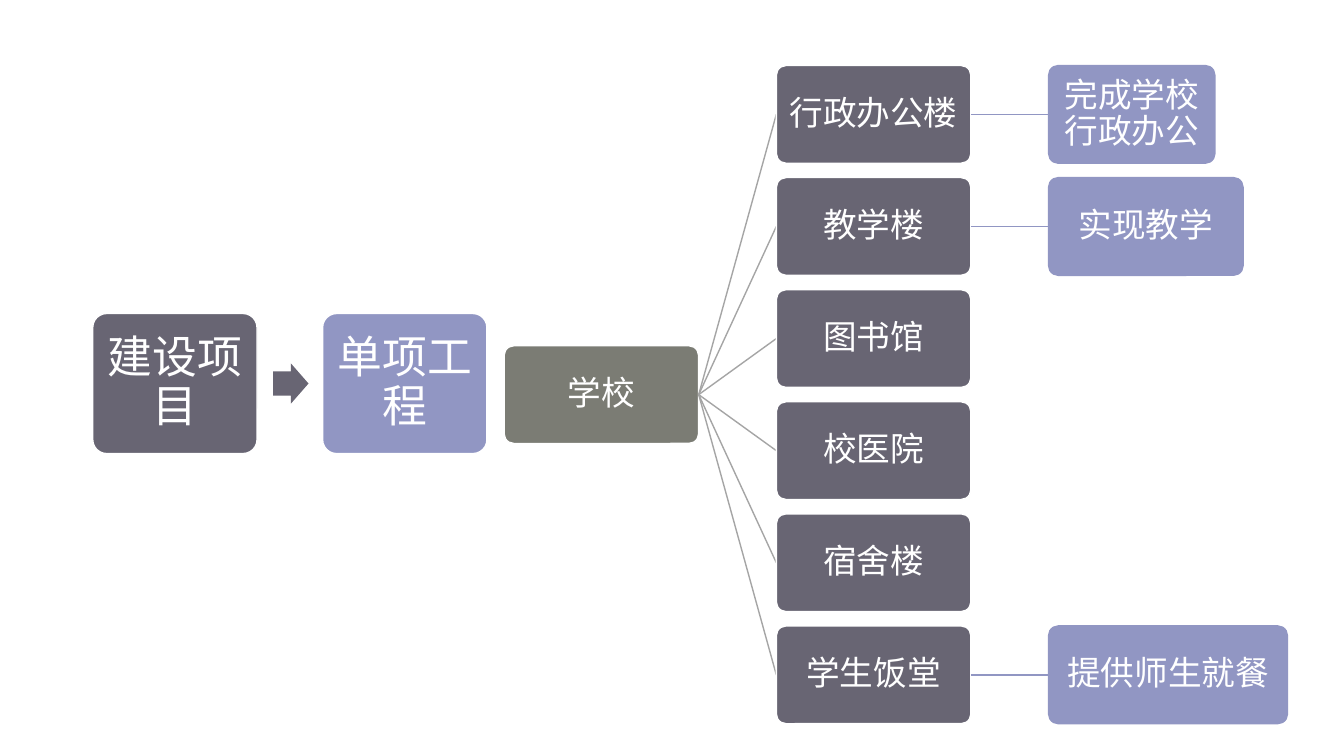
import pptx
import pptx.dml.color
import pptx.enum.shapes
import pptx.enum.text
import pptx.oxml.ns
import pptx.util
from lxml import etree

FONT = "Noto Sans CJK SC"
WHITE, SLATE, LILAC, OLIVE, GREY = "FFFFFF", "686573", "9196C3", "7B7C74", "A5A5A5"
NODE_WIDTH, NODE_HEIGHT, COLUMN_GAP, ROW_PITCH = 1.93, 0.97, 0.77, 1.112
BUILDINGS = [
    ("行政办公楼", "完成学校行政办公", 1.65),
    ("教学楼", "实现教学", 1.93),
    ("图书馆", None, 0),
    ("校医院", None, 0),
    ("宿舍楼", None, 0),
    ("学生饭堂", "提供师生就餐", 2.37),
]


def colour(hex_text):
    """Turn a hex string into a colour."""
    return pptx.dml.color.RGBColor.from_string(hex_text)


def add_block(slide, kind, box, fill, adjustments, outline=None):
    """Place a filled preset shape in a box given in inches."""
    shape = slide.shapes.add_shape(kind, *map(pptx.util.Inches, box))
    shape.shadow.inherit = False
    for index, value in enumerate(adjustments):
        shape.adjustments[index] = value
    shape.fill.solid()
    shape.fill.fore_color.rgb = colour(fill)
    if outline:
        shape.line.color.rgb = colour(outline)
        shape.line.width = pptx.util.Pt(1)
    else:
        shape.line.fill.background()
    return shape


def add_node(slide, box, text, fill, size=24, inset=0.02, outline=WHITE):
    """Place a rounded box with centred white text."""
    kind = pptx.enum.shapes.MSO_SHAPE.ROUNDED_RECTANGLE
    frame = add_block(slide, kind, box, fill, [0.1], outline).text_frame
    frame.word_wrap = True
    frame.vertical_anchor = pptx.enum.text.MSO_ANCHOR.MIDDLE
    frame.margin_left = frame.margin_right = pptx.util.Inches(inset)
    frame.margin_top = frame.margin_bottom = pptx.util.Inches(inset)
    paragraph = frame.paragraphs[0]
    paragraph.alignment = pptx.enum.text.PP_ALIGN.CENTER
    paragraph.line_spacing = 0.9
    run = paragraph.add_run()
    run.text = text
    run.font.size = pptx.util.Pt(size)
    run.font.color.rgb = colour(WHITE)
    run.font.name = FONT
    east_asian = etree.SubElement(run.font._element, pptx.oxml.ns.qn("a:ea"))
    east_asian.set("typeface", FONT)


def add_link(slide, start, end, line_colour):
    """Draw a thin straight line between two points."""
    connector = slide.shapes.add_connector(
        pptx.enum.shapes.MSO_CONNECTOR.STRAIGHT,
        *map(pptx.util.Inches, (*start, *end)))
    connector.line.color.rgb = colour(line_colour)
    connector.line.width = pptx.util.Pt(1)
    etree.SubElement(connector._element.spPr, pptx.oxml.ns.qn("a:effectLst"))


def add_process(slide, left, top, width, height):
    """Draw two steps joined by a block arrow across the box."""
    step_width = 1.63
    steps = [(left, "建设项目", SLATE), (left + width - step_width, "单项工程", LILAC)]
    for step_left, text, fill in steps:
        add_node(slide, (step_left, top, step_width, height), text, fill, 32, 0.09)
    arrow = (left + 1.79, top + (height - 0.4) / 2, 0.35, 0.4)
    add_block(slide, pptx.enum.shapes.MSO_SHAPE.RIGHT_ARROW, arrow, SLATE, [0.6, 0.5])


def add_tree(slide, left, top):
    """Draw the school, its buildings and their purposes as a tree."""
    building_left = left + NODE_WIDTH + COLUMN_GAP
    purpose_left = building_left + NODE_WIDTH + COLUMN_GAP
    middle = top + (len(BUILDINGS) - 1) * ROW_PITCH / 2
    root_end = (left + NODE_WIDTH, middle + NODE_HEIGHT / 2)
    add_node(slide, (left, middle, NODE_WIDTH, NODE_HEIGHT), "学校", OLIVE)
    for row, (building, purpose, purpose_width) in enumerate(BUILDINGS):
        row_top = top + row * ROW_PITCH
        centre = row_top + NODE_HEIGHT / 2
        add_link(slide, root_end, (building_left, centre), GREY)
        add_node(slide, (building_left, row_top, NODE_WIDTH, NODE_HEIGHT), building, SLATE)
        if purpose:
            add_link(slide, (building_left + NODE_WIDTH, centre), (purpose_left, centre), LILAC)
            add_node(slide, (purpose_left, row_top, purpose_width, NODE_HEIGHT),
                     purpose, LILAC, outline=LILAC)


def main():
    """Build the slide and save it."""
    presentation = pptx.Presentation()
    presentation.slide_width = pptx.util.Inches(13.33)
    presentation.slide_height = pptx.util.Inches(7.5)
    slide = presentation.slides.add_slide(presentation.slide_layouts[6])
    add_process(slide, 0.92, 3.11, 3.91, 1.39)
    add_tree(slide, 5, 0.65)
    presentation.save("out.pptx")


if __name__ == "__main__":
    main()
